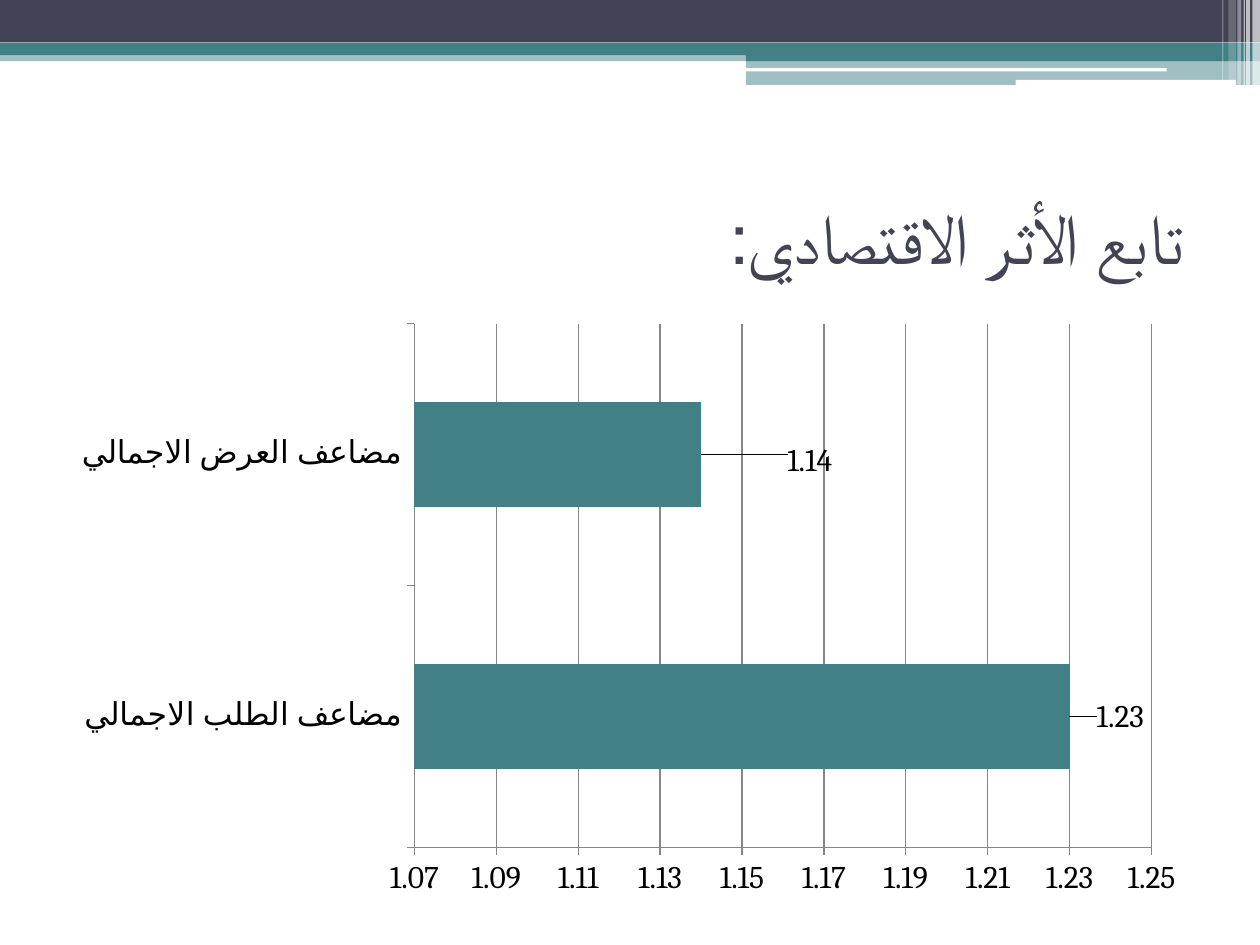
from lxml import etree
from pptx import Presentation
from pptx.chart.data import CategoryChartData
from pptx.dml.color import RGBColor
from pptx.enum.chart import XL_CHART_TYPE, XL_LABEL_POSITION, XL_TICK_MARK
from pptx.enum.shapes import MSO_SHAPE
from pptx.enum.text import MSO_ANCHOR, PP_ALIGN
from pptx.oxml import parse_xml
from pptx.oxml.ns import nsdecls, qn
from pptx.util import Inches, Pt

RECT, ROUND = MSO_SHAPE.RECTANGLE, MSO_SHAPE.ROUNDED_RECTANGLE
STACKED_BAR = XL_CHART_TYPE.BAR_STACKED
INSIDE_END = XL_LABEL_POSITION.INSIDE_END
CROSS = XL_TICK_MARK.CROSS
MIDDLE, RIGHT = MSO_ANCHOR.MIDDLE, PP_ALIGN.RIGHT
WIDTH, HEIGHT = 10, 7.5
NAVY, TEAL, WHITE, GREY, BLACK = "424456", "438086", "FFFFFF", "868686", "000000"


def color(value):
    return RGBColor.from_string(value)


def place(box):
    left, top, width, height = box
    return [Inches(length) for length in
            (left * WIDTH, top * HEIGHT, width * WIDTH, height * HEIGHT)]


def inside(box, left, top, width, height):
    return (box[0] + left * box[2], box[1] + top * box[3],
            width * box[2], height * box[3])


def add_band(page, box, fill, opacity=100, kind=RECT):
    band = page.shapes.add_shape(kind, *place(box))
    band.shadow.inherit = False
    band.line.fill.background()
    band.fill.solid()
    band.fill.fore_color.rgb = color(fill)
    if opacity < 100:
        tint = band.fill._xPr.find(".//" + qn("a:srgbClr"))
        etree.SubElement(tint, qn("a:alpha"), val=str(opacity * 1000))


def format_font(font, name, size, fill):
    font.name, font.size = name, Pt(size)
    font.color.rgb = color(fill)


def add_text(page, box, text, font="Cabin", size=40, fill=NAVY,
             align=RIGHT, anchor=MIDDLE, rtl=True):
    text_box = page.shapes.add_textbox(*place(box))
    frame = text_box.text_frame
    frame.word_wrap = True
    frame.vertical_anchor = anchor
    para = frame.paragraphs[0]
    para.alignment = align
    if rtl:
        para._p.get_or_add_pPr().set("rtl", "1")
    span = para.add_run()
    span.text = text
    format_font(span.font, font, size, fill)


def add_header(page, box):
    bands = [
        (0, 0.59, 1, 0.13, TEAL, 50, RECT),
        (0, 0, 1, 0.5, NAVY, 100, RECT),
        (0, 0.5, 1, 0.15, TEAL, 100, RECT),
        (0.592, 0.58, 0.408, 0.14, TEAL, 100, RECT),
        (0.592, 0.71, 0.408, 0.29, TEAL, 50, RECT),
        (0.591, 0.8, 0.335, 0.04, WHITE, 100, ROUND),
        (0.806, 0.94, 0.175, 0.06, WHITE, 100, ROUND),
    ]
    for left, top, width, height, fill, opacity, kind in bands:
        add_band(page, inside(box, left, top, width, height), fill, opacity, kind)
    stripes = [(0.994, 0.006, 1, 65), (0.989, 0.003, 1, 65), (0.987, 0.001, 1, 60),
               (0.982, 0.003, 1, 40), (0.975, 0.006, 0.94, 20), (0.97, 0.001, 0.94, 30)]
    for left, width, height, opacity in stripes:
        add_band(page, inside(box, left, 0, width, height), WHITE, opacity)


def manual_layout(left, top, size=None):
    parts = [("x", left), ("y", top)]
    modes = ""
    if size:
        modes = ('<c:layoutTarget val="inner"/><c:xMode val="edge"/>'
                 '<c:yMode val="edge"/>')
        parts += zip("wh", size)
    values = "".join(f'<c:{name} val="{value}"/>' for name, value in parts)
    return parse_xml(f'<c:layout {nsdecls("c")}><c:manualLayout>{modes}{values}'
                     '</c:manualLayout></c:layout>')


def style_line(line):
    line.color.rgb = color(GREY)
    line.width = Pt(0.75)


def add_multiplier_chart(page, box):
    data = CategoryChartData()
    data.categories = ["مضاعف الطلب الاجمالي", "مضاعف العرض الاجمالي"]
    data.add_series("Series 1", (1.23, 1.14))
    chart = page.shapes.add_chart(STACKED_BAR, *place(box), data).chart
    chart.has_legend = chart.has_title = False
    format_font(chart.font, "Cambria", 18, BLACK)
    for axis in (chart.category_axis, chart.value_axis):
        axis.major_tick_mark = CROSS if axis is chart.value_axis else XL_TICK_MARK.OUTSIDE
        axis.minor_tick_mark = XL_TICK_MARK.NONE
        style_line(axis.format.line)
    scale = chart.value_axis
    scale.major_tick_mark = XL_TICK_MARK.OUTSIDE
    scale.minimum_scale, scale.maximum_scale, scale.major_unit = 1.07, 1.25, 0.02
    scale.tick_labels.number_format = "0.00"
    scale.tick_labels.number_format_is_linked = False
    style_line(scale.major_gridlines.format.line)

    plot = chart.plots[0]
    plot.gap_width, plot.overlap, plot.vary_by_categories = 150, 100, False
    bars = plot.series[0]
    bars.format.fill.solid()
    bars.format.fill.fore_color.rgb = color(TEAL)
    bars.data_labels.show_value = True
    bars.data_labels.position = INSIDE_END
    for index, shift in enumerate([(0.07, 0), (0.12, 0.01)]):
        bars.points[index].data_label.position = INSIDE_END
        label = bars.data_labels._element.findall(qn("c:dLbl"))[index]
        label.find(qn("c:idx")).addnext(manual_layout(*shift))

    area = chart._chartSpace.find(".//" + qn("c:plotArea"))
    for layout in area.findall(qn("c:layout")):
        area.remove(layout)
    area.insert(0, manual_layout(0.31, 0.02, (0.65, 0.88)))


def main():
    deck = Presentation()
    deck.slide_width, deck.slide_height = Inches(WIDTH), Inches(HEIGHT)
    page = deck.slides.add_slide(deck.slide_layouts[6])
    add_header(page, (0, 0, 1, 0.09))
    add_text(page, (0.05, 0.17, 0.9, 0.16), "تابع الأثر الاقتصادي:")
    add_multiplier_chart(page, (0.05, 0.33, 0.9, 0.63))
    deck.save("out.pptx")


if __name__ == "__main__":
    main()
